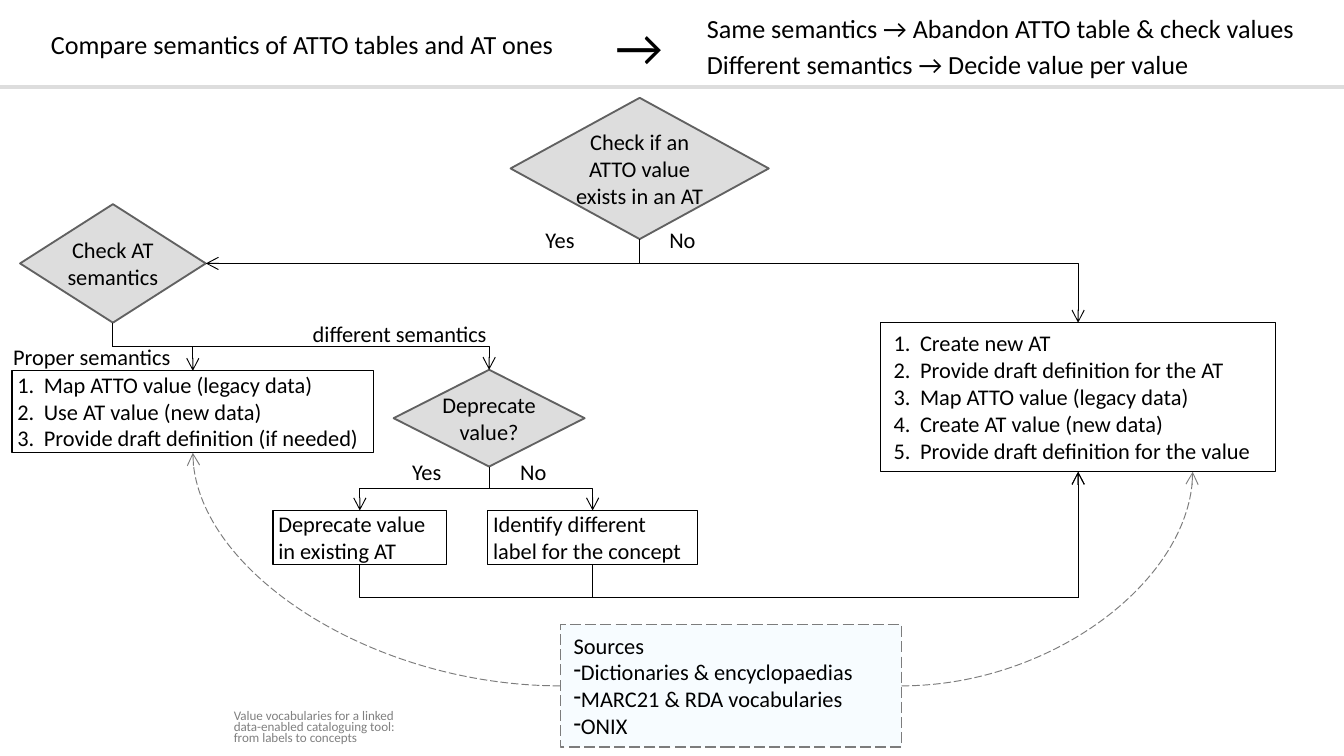
from dataclasses import dataclass
from typing import Optional

from lxml.etree import SubElement
from pptx import Presentation
from pptx.dml.color import RGBColor
from pptx.enum.dml import MSO_LINE
from pptx.enum.shapes import MSO_CONNECTOR, MSO_SHAPE
from pptx.enum.text import MSO_ANCHOR, MSO_AUTO_SIZE, PP_ALIGN
from pptx.oxml.ns import qn
from pptx.util import Cm, Pt

Point = tuple[float, float]
BLACK, GREY, DIVIDER = "000000", "7C7C7C", "DDDDDD"
NUMBERS = ("a:buAutoNum", {"type": "arabicPeriod"})
DASHES = ("a:buChar", {"char": "-"})


@dataclass(frozen=True)
class Box:
    left: float
    top: float
    width: float
    height: float
    lines: tuple[str, ...]
    size: float = 12
    color: str = BLACK
    wrap: bool = True
    anchor: MSO_ANCHOR = MSO_ANCHOR.TOP
    align: PP_ALIGN = PP_ALIGN.LEFT
    insets: Point = (0.25, 0.13)
    auto_size: MSO_AUTO_SIZE = MSO_AUTO_SIZE.SHAPE_TO_FIT_TEXT
    bullet: Optional[tuple[str, dict]] = None
    first_bullet: int = 0
    indent: float = 0
    spacing: Optional[float] = None

    def side(self, across: float, down: float) -> Point:
        return self.left + across * self.width, self.top + down * self.height

    @property
    def bottom_middle(self) -> Point:
        return self.side(0.5, 1)

    @property
    def top_middle(self) -> Point:
        return self.side(0.5, 0)


@dataclass(frozen=True)
class Elbow:
    begin: Point
    end: Point
    bend: Optional[float] = None


def rgb(color: str) -> RGBColor:
    return RGBColor.from_string(color)


def apply(target, values: dict) -> None:
    for attribute, value in values.items():
        setattr(target, attribute, value)


def place(box: Box) -> tuple:
    return Cm(box.left), Cm(box.top), Cm(box.width), Cm(box.height)


def write(frame, box: Box) -> None:
    side, end = map(Cm, box.insets)
    apply(frame, {
        "word_wrap": box.wrap, "auto_size": box.auto_size, "vertical_anchor": box.anchor,
        "margin_left": side, "margin_right": side, "margin_top": end, "margin_bottom": end,
    })
    for index, line in enumerate(box.lines):
        paragraph = frame.paragraphs[0] if index == 0 else frame.add_paragraph()
        paragraph.text = line
        apply(paragraph, {"alignment": box.align, "line_spacing": box.spacing})
        if box.bullet and index >= box.first_bullet:
            tag, attributes = box.bullet
            properties = paragraph._p.get_or_add_pPr()
            properties.set("marL", str(Cm(box.indent)))
            properties.set("indent", str(-Cm(box.indent)))
            SubElement(properties, qn(tag), attributes)
        apply(paragraph.font, {"name": "Calibri", "size": Pt(box.size)})
        paragraph.font.color.rgb = rgb(box.color)


def draw_label(slide, box: Box) -> None:
    write(slide.shapes.add_textbox(*place(box)).text_frame, box)


def draw_node(slide, box: Box, kind: MSO_SHAPE, fill: Optional[str],
              outline: str, weight: float, dash: Optional[MSO_LINE] = None) -> None:
    node = slide.shapes.add_shape(kind, *place(box))
    node.shadow.inherit = False
    if fill:
        node.fill.solid()
        node.fill.fore_color.rgb = rgb(fill)
    else:
        node.fill.background()
    node.line.color.rgb = rgb(outline)
    apply(node.line, {"width": Pt(weight), "dash_style": dash})
    write(node.text_frame, box)


def draw_line(slide, kind: MSO_CONNECTOR, begin: Point, end: Point, color: str,
              weight: float, dash: Optional[MSO_LINE] = None, arrow: bool = True):
    line = slide.shapes.add_connector(kind, *map(Cm, begin + end))
    line.line.color.rgb = rgb(color)
    apply(line.line, {"width": Pt(weight), "dash_style": dash})
    properties = line._element.spPr
    if arrow:
        SubElement(properties.find(qn("a:ln")), qn("a:tailEnd"), {"type": "arrow"})
    SubElement(properties, qn("a:effectLst"))
    return properties


def draw_elbow(slide, elbow: Elbow) -> None:
    (x1, y1), (x2, y2) = elbow.begin, elbow.end
    x, y, across, down = (x1 + x2) / 2, (y1 + y2) / 2, (x2 - x1) / 2, (y2 - y1) / 2
    properties = draw_line(slide, MSO_CONNECTOR.ELBOW, (x - down, y + across),
                           (x + down, y - across), BLACK, 0.5)
    properties.find(qn("a:xfrm")).set("rot", str(90 * 60000))
    geometry = properties.find(qn("a:prstGeom"))
    if elbow.bend is None:
        geometry.set("prst", "bentConnector2")
    else:
        SubElement(geometry.find(qn("a:avLst")), qn("a:gd"),
                   {"name": "adj1", "fmla": f"val {round(elbow.bend * 100000)}"})


def draw_curve(slide, begin: Point, end: Point) -> None:
    properties = draw_line(slide, MSO_CONNECTOR.CURVE, begin, end, GREY, 0.5, MSO_LINE.LONG_DASH)
    properties.find(qn("a:prstGeom")).set("prst", "curvedConnector2")


DECISION = {"anchor": MSO_ANCHOR.MIDDLE, "align": PP_ALIGN.CENTER,
            "insets": (0, 0), "auto_size": MSO_AUTO_SIZE.NONE}
TIGHT = {"insets": (0.1, 0)}
NUMBERED = {"bullet": NUMBERS, "indent": 0.5}

heading = Box(0.71, 0.41, 10.21, 0.86, ("Compare semantics of ATTO tables and AT ones",),
              size=14, wrap=False, anchor=MSO_ANCHOR.MIDDLE)
value_exists = Box(9.65, 1.85, 4.88, 2.67, ("Check if an", "ATTO value exists in an AT"), **DECISION)
check_semantics = Box(0.38, 3.86, 3.51, 2.24, ("Check AT semantics",), **DECISION)
deprecate = Box(7.44, 6.99, 3.61, 1.83, ("Deprecate value?",), **DECISION)
map_value = Box(0.23, 7.01, 6.83, 1.55, (
    "Map ATTO value (legacy data)", "Use AT value (new data)",
    "Provide draft definition (if needed)"), **TIGHT, **NUMBERED)
deprecate_value = Box(5.16, 9.65, 3.28, 1.02, ("Deprecate value in existing AT",), **TIGHT)
new_label = Box(9.22, 9.65, 3.96, 1.02, ("Identify different label for the concept",), **TIGHT)
create_table = Box(16.64, 6.1, 7.47, 2.82, (
    "Create new AT", "Provide draft definition for the AT", "Map ATTO value (legacy data)",
    "Create AT value (new data)", "Provide draft definition for the value"),
    wrap=False, **NUMBERED)
sources = Box(10.59, 11.81, 6.45, 2.31, (
    "Sources", "Dictionaries & encyclopaedias", "MARC21 & RDA vocabularies", "ONIX"),
    bullet=DASHES, first_bullet=1)

labels = [
    Box(13.11, 0.1, 11.79, 0.86, ("Same semantics → Abandon ATTO table & check values",), size=14),
    Box(13.11, 0.79, 11.28, 0.86, ("Different semantics → Decide value per value",), size=14),
    Box(11.38, 0.13, 1.5, 1.45, ("→",), size=28, wrap=False, anchor=MSO_ANCHOR.MIDDLE),
    Box(10.06, 4.14, 1.07, 0.76, ("Yes",), wrap=False),
    Box(12.4, 4.14, 1.02, 0.76, ("No",), wrap=False),
    Box(7.54, 8.53, 1.07, 0.76, ("Yes",), wrap=False),
    Box(9.58, 8.53, 1.02, 0.76, ("No",), wrap=False),
    Box(5.66, 5.92, 4.42, 0.76, ("different semantics",)),
    Box(0, 6.35, 3.53, 0.76, ("Proper semantics",), wrap=False),
    Box(4.42, 13.18, 3.05, 0.89, (
        "Value vocabularies for a linked data-enabled cataloguing tool: from labels to concepts",),
        size=7, color="808080", anchor=MSO_ANCHOR.BOTTOM, insets=(0, 0),
        auto_size=MSO_AUTO_SIZE.NONE, spacing=0.7),
]
elbows = [
    Elbow(value_exists.bottom_middle, check_semantics.side(1, 0.5)),
    Elbow(value_exists.bottom_middle, create_table.top_middle, 0.29),
    Elbow(check_semantics.bottom_middle, map_value.top_middle, 0.5),
    Elbow(check_semantics.bottom_middle, deprecate.top_middle, 0.5),
    Elbow(deprecate.bottom_middle, deprecate_value.top_middle, 0.5),
    Elbow(deprecate.bottom_middle, new_label.top_middle, 0.5),
    Elbow(deprecate_value.bottom_middle, create_table.bottom_middle, -0.36),
    Elbow(new_label.bottom_middle, create_table.bottom_middle, -0.36),
]


def main() -> None:
    presentation = Presentation()
    apply(presentation, {"slide_width": Cm(25.4), "slide_height": Cm(14.29)})
    slide = presentation.slides.add_slide(presentation.slide_layouts[5])
    title = slide.shapes.title
    apply(title, dict(zip(("left", "top", "width", "height"), place(heading))))
    write(title.text_frame, heading)
    draw_line(slide, MSO_CONNECTOR.STRAIGHT, (0, 1.65), (25.4, 1.65), DIVIDER, 2.25, arrow=False)
    for decision in (value_exists, check_semantics, deprecate):
        draw_node(slide, decision, MSO_SHAPE.DIAMOND, "DDDDDD", "616161", 1)
    for action in (map_value, deprecate_value, new_label):
        draw_node(slide, action, MSO_SHAPE.RECTANGLE, None, BLACK, 0.75)
    draw_node(slide, create_table, MSO_SHAPE.RECTANGLE, "FFFFFF", BLACK, 0.75)
    draw_node(slide, sources, MSO_SHAPE.RECTANGLE, "F7FCFF", GREY, 0.75, MSO_LINE.LONG_DASH)
    for elbow in elbows:
        draw_elbow(slide, elbow)
    draw_curve(slide, sources.side(0, 0.5), map_value.bottom_middle)
    draw_curve(slide, sources.side(1, 0.5), create_table.side(0.79, 1))
    for label in labels:
        draw_label(slide, label)
    presentation.save("out.pptx")


if __name__ == "__main__":
    main()
